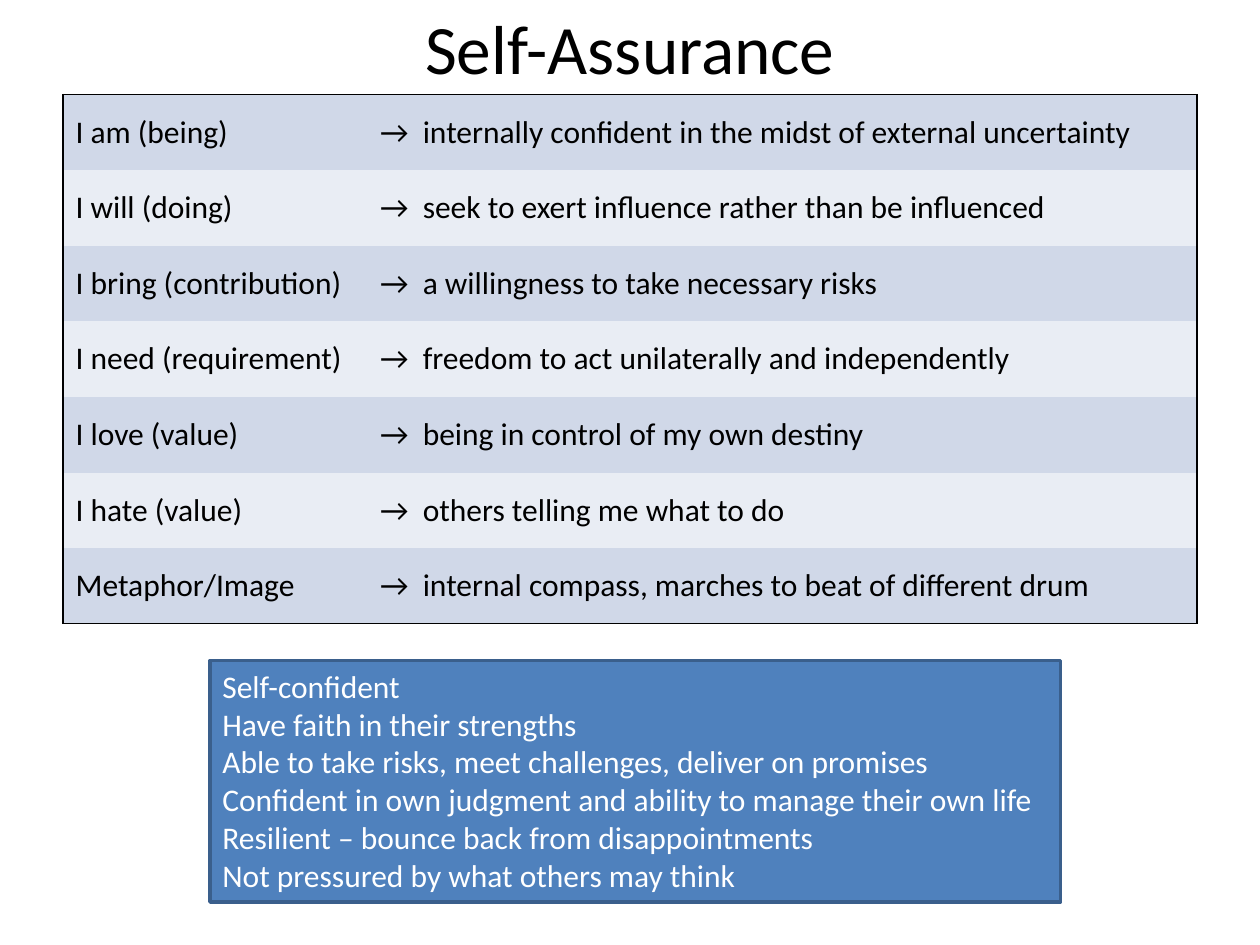
from pptx import Presentation
from pptx.dml.color import RGBColor as RGB
from pptx.enum.shapes import MSO_SHAPE as Shape
from pptx.enum.text import MSO_ANCHOR as Anchor, PP_ALIGN as Align
from pptx.util import Pt
from lxml.etree import SubElement as Sub
from pptx.oxml.ns import qn


def style(frame, size, color, align=Align.LEFT):
    for para in frame.paragraphs:
        para.alignment = align
        for run in para.runs:
            run.font.name = "Calibri"
            run.font.size = Pt(size)
            run.font.color.rgb = RGB.from_string(color)


def edge(cell, side, drawn):
    """Draw a black 1 pt border on one side (L, R, T, B), or clear it."""
    line = Sub(cell._tc.get_or_add_tcPr(), qn("a:ln" + side), w=str(Pt(1)))
    if drawn:
        fill = Sub(line, qn("a:solidFill"))
        Sub(fill, qn("a:srgbClr"), val="000000")
    else:
        Sub(line, qn("a:noFill"))


pres = Presentation()
pres.slide_width, pres.slide_height = Pt(720), Pt(540)
slide = pres.slides.add_slide(pres.slide_layouts[6])

# Title
title = slide.shapes.add_textbox(Pt(36), Pt(12), Pt(648), Pt(30)).text_frame
title.word_wrap = True
title.vertical_anchor = Anchor.MIDDLE
title.text = "Self-Assurance"
style(title, 39.6, "000000", Align.CENTER)

# Table of statements
rows = [
    ("I am (being)", "internally confident in the midst of external uncertainty"),
    ("I will (doing)", "seek to exert influence rather than be influenced"),
    ("I bring (contribution)", "a willingness to take necessary risks"),
    ("I need (requirement)", "freedom to act unilaterally and independently"),
    ("I love (value)", "being in control of my own destiny"),
    ("I hate (value)", "others telling me what to do"),
    ("Metaphor/Image", "internal compass, marches to beat of different drum"),
]
bands = ["D0D8E8", "E9EDF4"]
last = len(rows) - 1
table = slide.shapes.add_table(
    len(rows), 2, Pt(36), Pt(54), Pt(648), Pt(302.4)).table
table.first_row = table.horz_banding = False
table.columns[0].width, table.columns[1].width = Pt(174), Pt(474)

for i, (label, trait) in enumerate(rows):
    table.rows[i].height = Pt(43.2)
    for j, text in enumerate([label, "→  " + trait]):
        cell = table.cell(i, j)
        cell.text_frame.text = text
        cell.vertical_anchor = Anchor.MIDDLE
        style(cell.text_frame, 18, "000000")
        outer = {"L": j == 0, "R": j == 1, "T": i == 0, "B": i == last}
        for side, drawn in outer.items():
            edge(cell, side, drawn)
        cell.fill.solid()
        cell.fill.fore_color.rgb = RGB.from_string(bands[i % 2])

# Summary box
traits = [
    "Self-confident",
    "Have faith in their strengths",
    "Able to take risks, meet challenges, deliver on promises",
    "Confident in own judgment and ability to manage their own life",
    "Resilient – bounce back from disappointments",
    "Not pressured by what others may think",
]
box = slide.shapes.add_shape(
    Shape.RECTANGLE, Pt(120), Pt(377.5), Pt(486), Pt(138))
box.shadow.inherit = False
box.fill.solid()
box.fill.fore_color.rgb = RGB.from_string("4F81BD")
box.line.color.rgb = RGB.from_string("3A5F8C")
box.line.width = Pt(2)
box.text_frame.word_wrap = True
box.text_frame.vertical_anchor = Anchor.TOP
box.text_frame.text = "\n".join(traits)
style(box.text_frame, 18, "FFFFFF")

pres.save("out.pptx")
